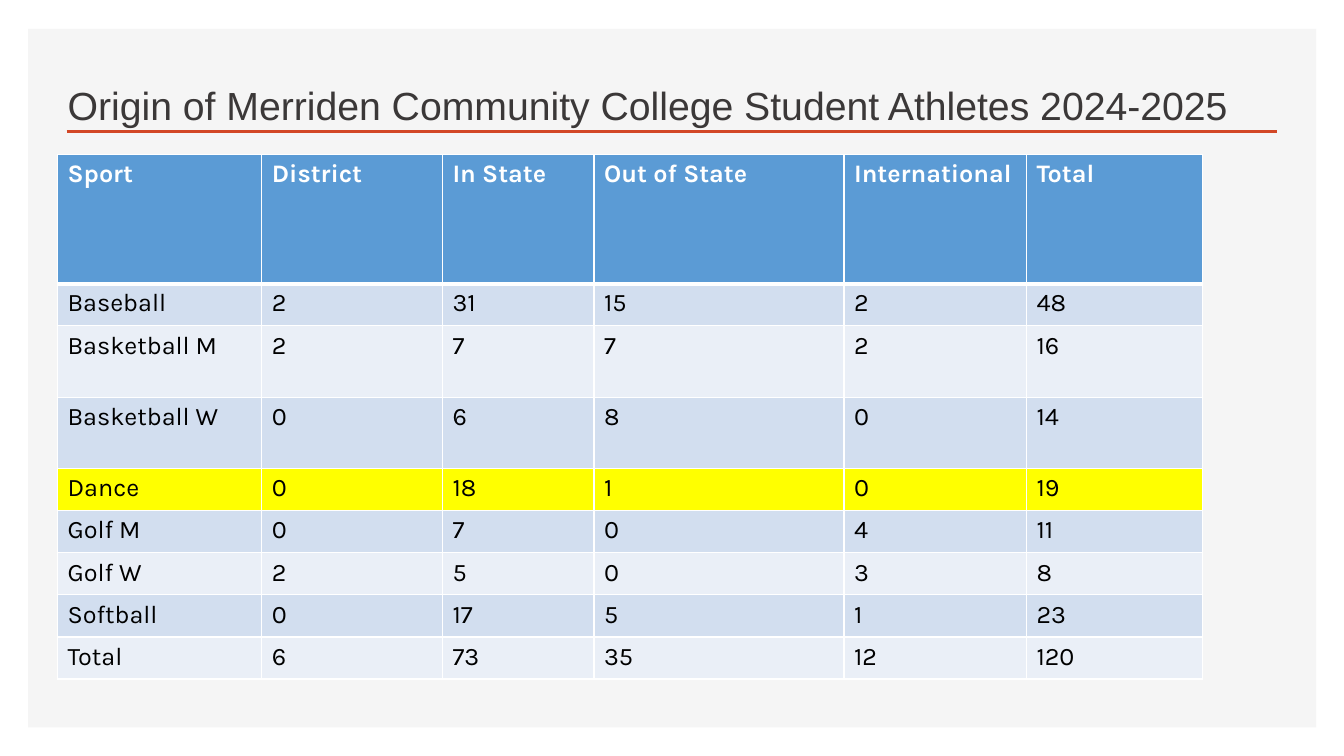
from dataclasses import dataclass

from lxml.etree import SubElement
from pptx import Presentation
from pptx.dml.color import RGBColor
from pptx.enum.shapes import MSO_CONNECTOR, MSO_SHAPE
from pptx.enum.text import MSO_ANCHOR, MSO_AUTO_SIZE, PP_ALIGN
from pptx.oxml.ns import qn
from pptx.slide import Slide
from pptx.table import _Cell
from pptx.util import Cm, Pt

TITLE = "Origin of Merriden Community College Student Athletes 2024-2025"
HEADERS = ("Sport", "District", "In State", "Out of State", "International", "Total")
COLUMN_WIDTHS = (5.15, 4.55, 3.82, 6.3, 4.6, 4.44)
HEADER_HEIGHT, ROW_HEIGHT, TALL_ROW_HEIGHT = 3.26, 1.06, 1.8
LEFT = 1.45

WHITE, BLACK = "FFFFFF", "000000"
PANEL_GREY, RULE_ORANGE, TITLE_GREY = "F5F5F5", "D24726", "3B3838"
HEADER_BLUE, HIGHLIGHT = "5B9BD5", "FFFF00"
BANDS = ("D2DEEF", "EAEFF7")


@dataclass(frozen=True)
class SportRow:
    sport: str
    counts: tuple[int, ...]
    height: float = ROW_HEIGHT
    highlighted: bool = False


SPORTS = (
    SportRow("Baseball", (2, 31, 15, 2, 48)),
    SportRow("Basketball M", (2, 7, 7, 2, 16), TALL_ROW_HEIGHT),
    SportRow("Basketball W", (0, 6, 8, 0, 14), TALL_ROW_HEIGHT),
    SportRow("Dance", (0, 18, 1, 0, 19), highlighted=True),
    SportRow("Golf M", (0, 7, 0, 4, 11)),
    SportRow("Golf W", (2, 5, 0, 3, 8)),
    SportRow("Softball", (0, 17, 5, 1, 23)),
    SportRow("Total", (6, 73, 35, 12, 120)),
)


def color(hex_value: str) -> RGBColor:
    return RGBColor.from_string(hex_value)


def add_panel(slide: Slide) -> None:
    panel = slide.shapes.add_shape(
        MSO_SHAPE.RECTANGLE, Cm(0.71), Cm(0.73), Cm(32.46), Cm(17.6))
    panel.shadow.inherit = False
    panel.fill.solid()
    panel.fill.fore_color.rgb = color(PANEL_GREY)
    panel.line.fill.background()


def add_title_rule(slide: Slide) -> None:
    rule = slide.shapes.add_connector(
        MSO_CONNECTOR.STRAIGHT, Cm(1.68), Cm(3.32), Cm(32.18), Cm(3.32))
    rule.line.color.rgb = color(RULE_ORANGE)
    rule.line.width = Pt(2)
    SubElement(rule.element.spPr, qn("a:effectLst"))


def place_title(slide: Slide) -> None:
    """Fill the title placeholder and bring it in front of the panel."""
    title = slide.shapes.title
    title.left, title.top, title.width, title.height = (
        Cm(LEFT), Cm(1.16), Cm(30.56), Cm(2.2))
    frame = title.text_frame
    frame.text = TITLE
    frame.auto_size = MSO_AUTO_SIZE.NONE
    frame.vertical_anchor = MSO_ANCHOR.BOTTOM
    paragraph = frame.paragraphs[0]
    paragraph.alignment = PP_ALIGN.LEFT
    paragraph.font.name = "Arial"
    paragraph.font.size = Pt(28)
    paragraph.font.color.rgb = color(TITLE_GREY)
    title.element.getparent().append(title.element)


def set_borders(cell: _Cell, top: float, bottom: float) -> None:
    """Draw white borders; must run before the cell gets its fill."""
    properties = cell._tc.get_or_add_tcPr()
    for side, width in (("L", 1), ("R", 1), ("T", top), ("B", bottom)):
        line = SubElement(properties, qn(f"a:ln{side}"), w=str(Pt(width)))
        fill = SubElement(line, qn("a:solidFill"))
        SubElement(fill, qn("a:srgbClr"), val=WHITE)


def format_cell(cell: _Cell, text: str, fill: str, is_header: bool) -> None:
    cell.text = text
    cell.fill.solid()
    cell.fill.fore_color.rgb = color(fill)
    font = cell.text_frame.paragraphs[0].font
    font.name = "Karla"
    font.size = Pt(18)
    font.bold = is_header
    font.color.rgb = color(WHITE if is_header else BLACK)


def add_athlete_table(slide: Slide) -> None:
    heights = [HEADER_HEIGHT] + [row.height for row in SPORTS]
    table = slide.shapes.add_table(
        len(heights), len(HEADERS), Cm(LEFT), Cm(3.89),
        Cm(sum(COLUMN_WIDTHS)), Cm(sum(heights))).table
    for column, width in zip(table.columns, COLUMN_WIDTHS):
        column.width = Cm(width)
    for row, height in zip(table.rows, heights):
        row.height = Cm(height)

    fills = [HEADER_BLUE] + [
        HIGHLIGHT if row.highlighted else BANDS[index % 2]
        for index, row in enumerate(SPORTS)]
    texts = [HEADERS] + [(row.sport, *map(str, row.counts)) for row in SPORTS]
    for index, (row, fill, values) in enumerate(zip(table.rows, fills, texts)):
        for cell, text in zip(row.cells, values):
            set_borders(cell, top=3 if index == 1 else 1, bottom=3 if index == 0 else 1)
            format_cell(cell, text, fill, is_header=index == 0)


def main() -> None:
    presentation = Presentation()
    presentation.slide_width, presentation.slide_height = Cm(33.87), Cm(19.05)
    title_only = presentation.slide_layouts.get_by_name("Title Only")
    slide = presentation.slides.add_slide(title_only)
    add_panel(slide)
    add_title_rule(slide)
    place_title(slide)
    add_athlete_table(slide)
    presentation.save("out.pptx")


if __name__ == "__main__":
    main()
